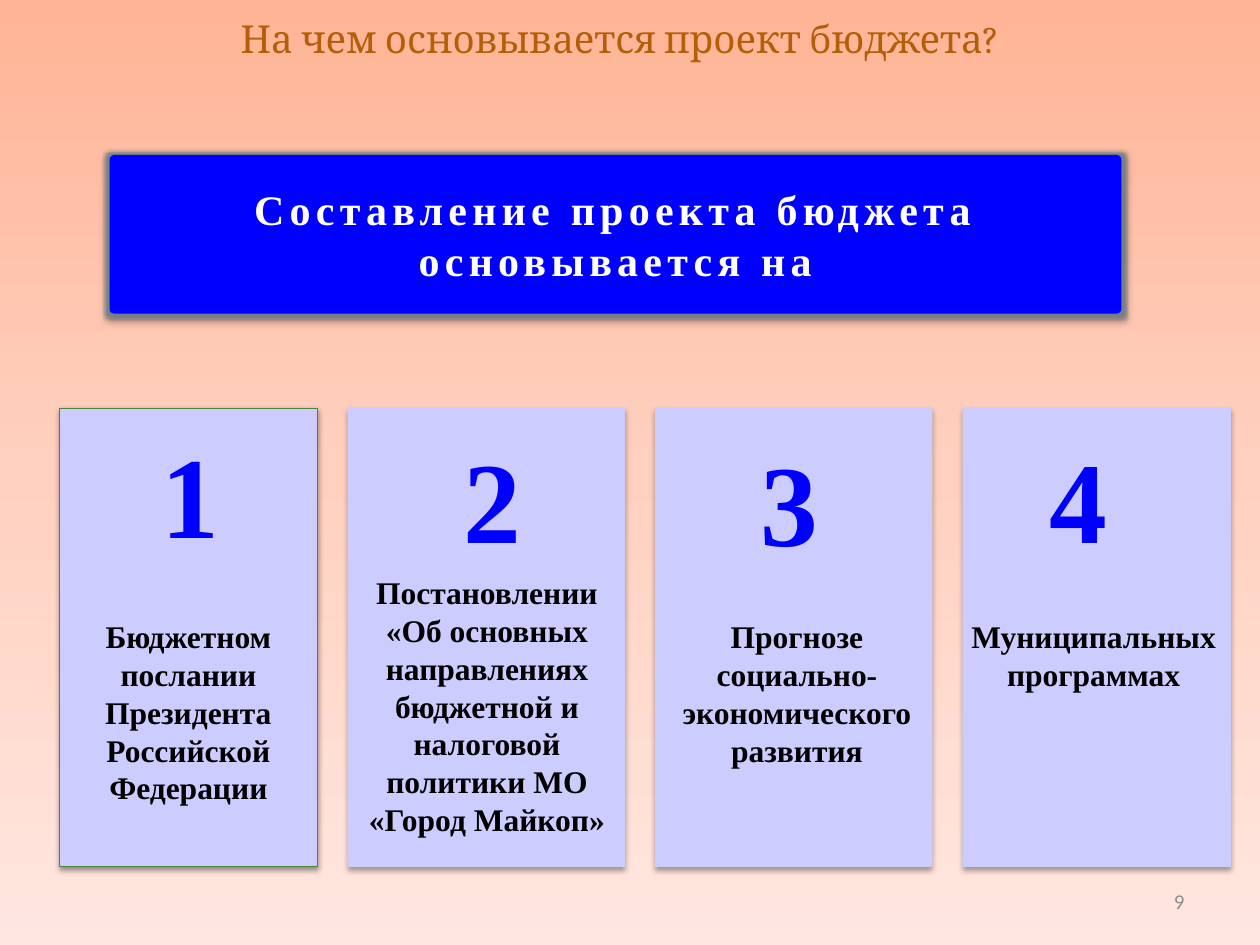
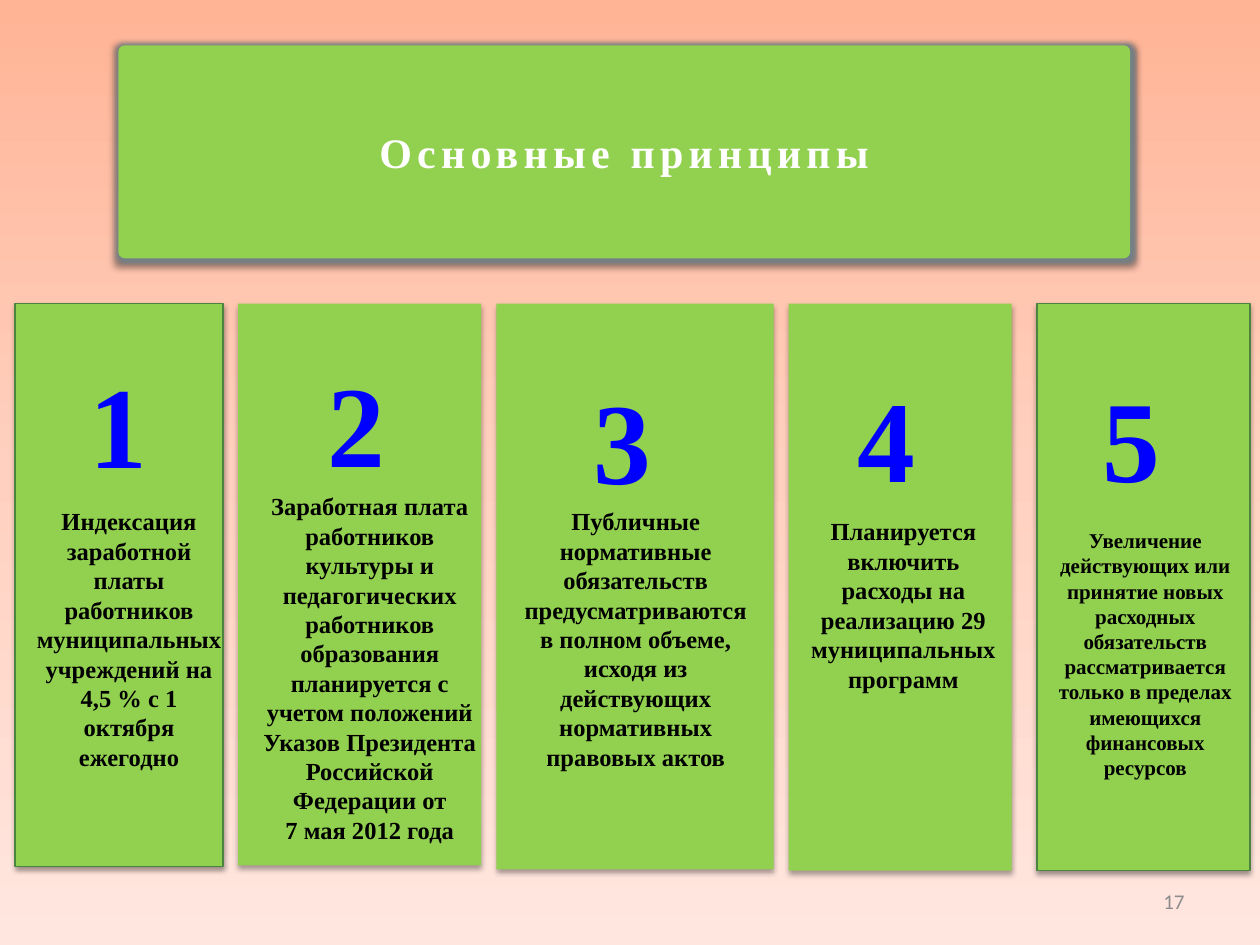
from collections import namedtuple

from lxml.etree import SubElement
from pptx import Presentation
from pptx.dml.color import RGBColor
from pptx.enum.shapes import MSO_SHAPE as Shape
from pptx.enum.text import MSO_ANCHOR as Anchor, PP_ALIGN as Align
from pptx.oxml import parse_xml
from pptx.oxml.ns import nsdecls, qn
from pptx.util import Inches, Pt

PEACH = RGBColor(0xFF, 0xB4, 0x96)
LIGHT_PEACH = RGBColor(0xFF, 0xD0, 0xBF)
PALE_PEACH = RGBColor(0xFF, 0xE7, 0xE0)
LAVENDER = RGBColor(0xCC, 0xCC, 0xFF)
GREEN = RGBColor(0x92, 0xD0, 0x50)
DARK_GREEN = RGBColor(0x4B, 0x84, 0x3F)
BLUE = RGBColor(0x00, 0x00, 0xFF)
BROWN = RGBColor(0xB4, 0x5F, 0x07)
MAROON = RGBColor(0x50, 0x14, 0x1B)
GRAY = RGBColor(0x8C, 0x8C, 0x8C)
SLATE = RGBColor(0x70, 0x80, 0x88)
BLACK = RGBColor(0x00, 0x00, 0x00)
WHITE = RGBColor(0xFF, 0xFF, 0xFF)

SERIF = "Times New Roman"
TITLE_FONT = "Cambria"
NUMBER_FONT = "Calibri"

# place and text_place are (left, top, width, height); digit_at is (left, top)
Card = namedtuple("Card", "place outlined digit_at text_place size lines")

BASIS_CARDS = [
    Card((0.47, 3.24, 2.05, 3.64), True, (1.18, 3.4), (0.47, 4.85, 2.05, 1.84), 18,
         ["Бюджетном послании Президента Российской Федерации"]),
    Card((2.76, 3.24, 2.2, 3.64), False, (3.58, 3.44), (2.76, 4.5, 2.21, 2.2), 18,
         ["Постановлении «Об основных направлениях бюджетной и налоговой "
          "политики МО «Город Майкоп»"]),
    Card((5.2, 3.24, 2.2, 3.64), False, (5.94, 3.46), (5.28, 4.85, 2.09, 1.84), 18,
         ["Прогнозе социально-экономического развития"]),
    Card((7.64, 3.24, 2.13, 3.64), False, (8.23, 3.44), (7.56, 4.85, 2.24, 1.84), 18,
         ["Муниципальных программах"]),
]

PRINCIPLE_CARDS = [
    Card((0.12, 2.41, 1.65, 4.47), True, (0.61, 2.84), (0.16, 3.97, 1.73, 2.81), 14,
         ["Индексация заработной платы работников муниципальных учреждений на",
          "4,5 % с 1 октября ежегодно"]),
    Card((1.89, 2.41, 1.93, 4.46), False, (2.5, 2.83), (1.93, 3.85, 2.01, 2.87), 14,
         ["Заработная плата работников культуры и педагогических работников "
          "образования планируется с учетом положений Указов Президента "
          "Российской Федерации от",
          "7 мая 2012 года"]),
    Card((3.94, 2.41, 2.2, 4.49), False, (4.61, 2.97), (4, 3.97, 2.09, 2.73), 14,
         ["Публичные нормативные обязательств предусматриваются в полном объеме, "
          "исходя из действующих нормативных правовых актов"]),
    Card((6.26, 2.41, 1.77, 4.5), False, (6.71, 2.95), (6.31, 4.05, 1.72, 2.67), 14,
         ["Планируется включить расходы на реализацию 29 муниципальных программ"]),
    Card((8.23, 2.41, 1.69, 4.5), True, (8.65, 2.95), (8.23, 4.14, 1.72, 2.67), 12,
         ["Увеличение действующих или принятие новых расходных обязательств "
          "рассматривается только в пределах имеющихся финансовых ресурсов"]),
]


def add_page(deck):
    """Add a blank page with the peach gradient running from top to bottom."""
    page = deck.slides.add_slide(deck.slide_layouts[6])
    fill = page.background.fill
    fill.gradient()
    stops = page.background._cSld.find(".//" + qn("a:gsLst"))
    for stop in list(stops):
        stops.remove(stop)
    for position, color in ((0, PEACH), (50, LIGHT_PEACH), (100, PALE_PEACH)):
        stop = SubElement(stops, qn("a:gs"), pos=str(position * 1000))
        SubElement(stop, qn("a:srgbClr"), val=str(color))
    fill.gradient_angle = 270
    return page


def write(shape, lines, font, size, color, bold=False, align=Align.CENTER, anchor=Anchor.TOP):
    frame = shape.text_frame
    frame.word_wrap = True
    frame.vertical_anchor = anchor
    frame.text = "\n".join(lines)
    for para in frame.paragraphs:
        para.alignment = align
        para.font.name = font
        para.font.size = Pt(size)
        para.font.bold = bold
        para.font.color.rgb = color
    return frame.paragraphs[0]


def add_text(page, place, lines, *style, **layout):
    box = page.shapes.add_textbox(*map(Inches, place))
    return write(box, lines, *style, **layout)


def set_effects(shape, opacity, distance, glow=""):
    """Give the shape a soft shadow below it, after an optional glow."""
    effects = parse_xml(
        f'<a:effectLst {nsdecls("a")}>{glow}'
        f'<a:outerShdw blurRad="{Pt(3.1)}" dist="{Pt(distance)}" dir="5400000" rotWithShape="0">'
        f'<a:srgbClr val="{BLACK}"><a:alpha val="{opacity * 1000}"/></a:srgbClr>'
        '</a:outerShdw></a:effectLst>')
    shape.shadow.inherit = False
    properties = shape._element.spPr
    properties.replace(properties.find(qn("a:effectLst")), effects)


def add_panel(page, kind, place, color):
    panel = page.shapes.add_shape(kind, *map(Inches, place))
    panel.fill.solid()
    panel.fill.fore_color.rgb = color
    panel.line.fill.background()
    return panel


def add_banner(page, place, color, text):
    banner = add_panel(page, Shape.ROUNDED_RECTANGLE, place, color)
    banner.adjustments[0] = 0.03
    glow = f'<a:glow rad="{Pt(4)}"><a:srgbClr val="{SLATE}"/></a:glow>'
    set_effects(banner, 38, 1.6, glow)
    para = write(banner, [text], SERIF, 24, WHITE, bold=True, anchor=Anchor.MIDDLE)
    para.runs[0]._r.get_or_add_rPr().set("spc", "300")


def add_cards(page, cards, color):
    """Draw the numbered cards: a panel, a large digit and the wording."""
    for number, card in enumerate(cards, 1):
        panel = add_panel(page, Shape.RECTANGLE, card.place, color)
        if card.outlined:
            panel.line.color.rgb = DARK_GREEN
            panel.line.width = Pt(0.75)
            set_effects(panel, 38, 1.6)
        else:
            set_effects(panel, 35, 1.8)
        add_text(page, (*card.digit_at, 0.87, 1.02), [str(number)], SERIF, 66, BLUE,
                 bold=True, align=Align.LEFT, anchor=Anchor.MIDDLE)
        add_text(page, card.text_place, card.lines, SERIF, card.size, BLACK, bold=True)


def add_title(page, text):
    para = add_text(page, (0.98, 0, 7.88, 0.61), [text], TITLE_FONT, 22, BROWN,
                    anchor=Anchor.MIDDLE)
    outline = parse_xml(
        f'<a:ln {nsdecls("a")} w="{Pt(0.83)}"><a:solidFill>'
        f'<a:srgbClr val="{MAROON}"/></a:solidFill></a:ln>')
    para.runs[0]._r.get_or_add_rPr().insert(0, outline)


def add_page_number(page, number):
    add_text(page, (7.17, 6.95, 2.33, 0.4), [str(number)], NUMBER_FONT, 12, GRAY,
             align=Align.RIGHT, anchor=Anchor.MIDDLE)


def main():
    deck = Presentation()
    deck.slide_width, deck.slide_height = Inches(10), Inches(7.5)

    basis = add_page(deck)
    add_title(basis, "На чем основывается проект бюджета?")
    add_banner(basis, (0.87, 1.23, 8.03, 1.26), BLUE,
               "Составление проекта бюджета основывается на")
    add_cards(basis, BASIS_CARDS, LAVENDER)
    add_page_number(basis, 9)

    principles = add_page(deck)
    add_banner(principles, (0.94, 0.36, 8.03, 1.69), GREEN, "Основные принципы")
    add_cards(principles, PRINCIPLE_CARDS, GREEN)
    add_page_number(principles, 17)

    deck.save("out.pptx")


if __name__ == "__main__":
    main()
